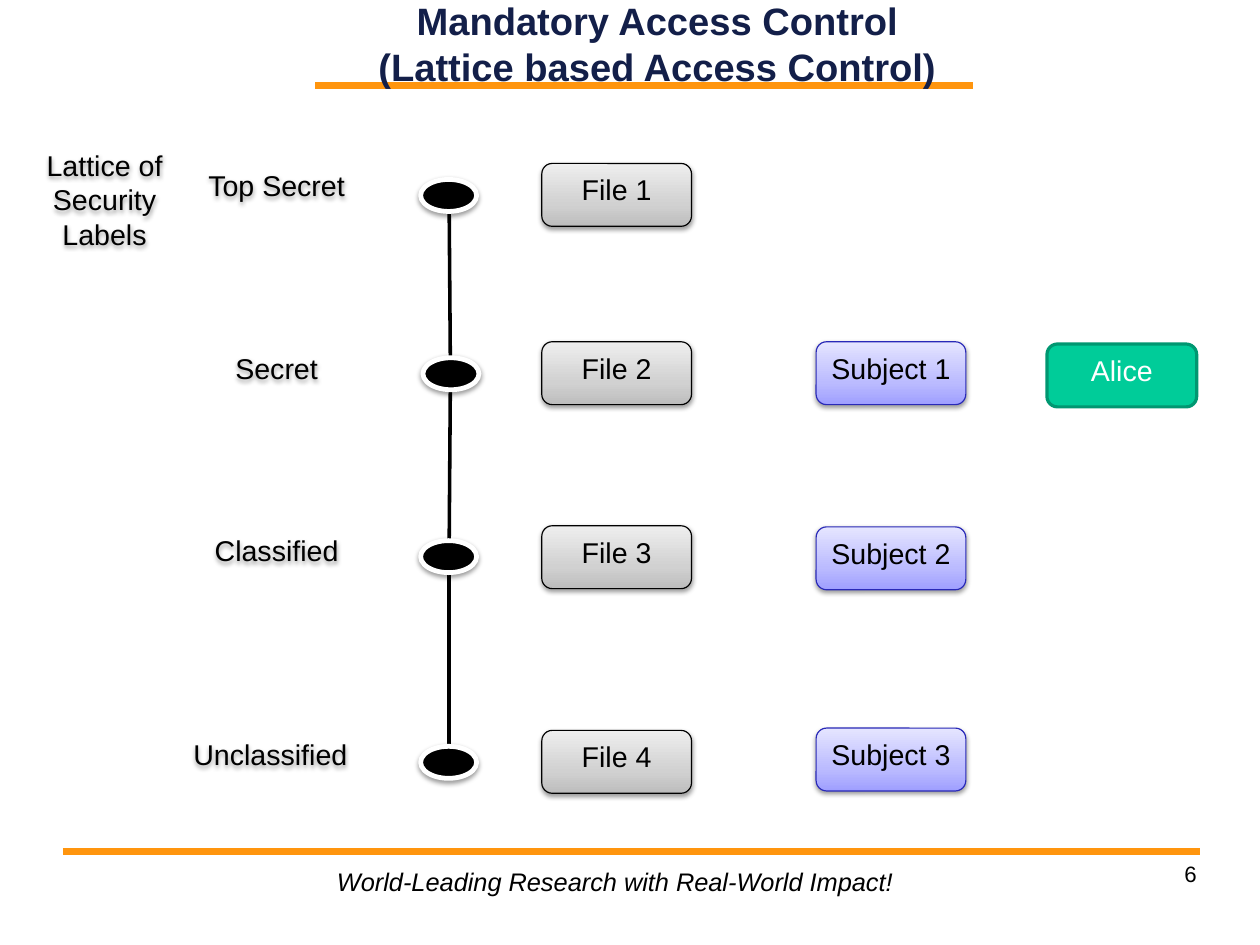
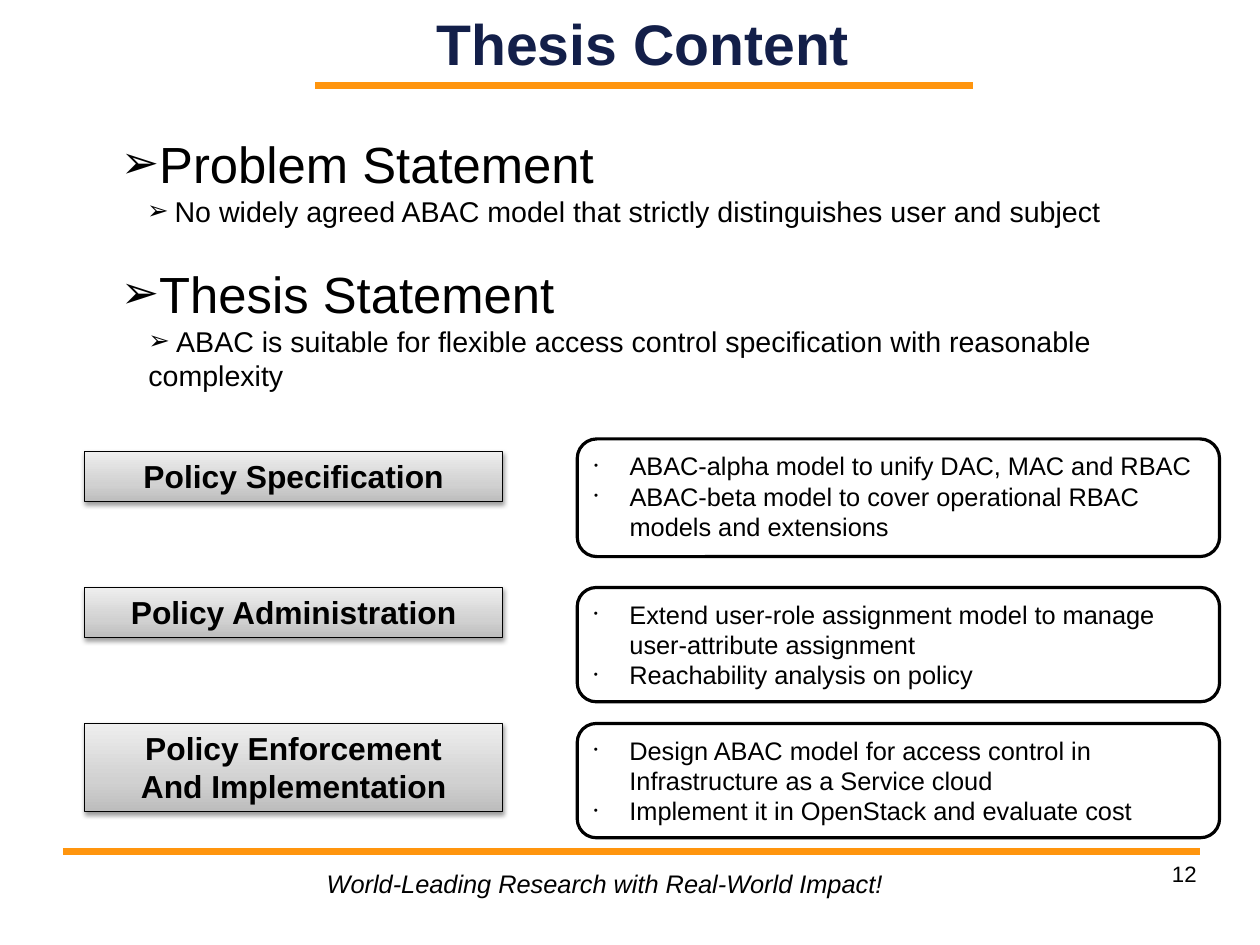
"""Builds two slides on lattice access control and thesis content."""
import copy

import lxml.etree
import pptx
import pptx.dml.color
import pptx.enum.shapes
import pptx.enum.text
import pptx.oxml
import pptx.oxml.ns
import pptx.util

PX = 9144
FONT = "Arial"
BLACK, WHITE, NAVY, ORANGE = "000000", "FFFFFF", "131F49", "FF950E"
GREY = ("BDBDBD", "D1D1D1", "EEEEEE")
LILAC = ("9F9FFF", "BBBBFF", "E5E5FF")
SHADOW = (
    f'<a:outerShdw {pptx.oxml.ns.nsdecls("a")} blurRad="39370" dist="20320" dir="5400000" rotWithShape="0">'
    '<a:srgbClr val="000000"><a:alpha val="38000"/></a:srgbClr></a:outerShdw>'
)
Shape = pptx.enum.shapes.MSO_SHAPE
Align = pptx.enum.text.PP_ALIGN
Anchor = pptx.enum.text.MSO_ANCHOR
color = pptx.dml.color.RGBColor.from_string
qn = pptx.oxml.ns.qn


def place(page, kind, at, fill=None, line=None, width=0.75, shadow=True):
    """Add a shape with a plain, three-stop gradient or empty fill."""
    box = page.shapes.add_shape(kind, *[value * PX for value in at])
    box.shadow.inherit = False
    properties = box._element.spPr
    if shadow:
        properties.find(qn("a:effectLst")).append(pptx.oxml.parse_xml(SHADOW))
    if isinstance(fill, tuple):
        box.fill.gradient()
        box.fill.gradient_angle = 90
        stops = properties.find(".//" + qn("a:gsLst"))
        stops.insert(1, copy.deepcopy(stops[0]))
        for stop, position, tone in zip(box.fill.gradient_stops, (0, 0.35, 1), fill):
            stop.position = position
            stop.color.rgb = color(tone)
    elif fill:
        box.fill.solid()
        box.fill.fore_color.rgb = color(fill)
    else:
        box.fill.background()
    if line:
        box.line.color.rgb = color(line)
        box.line.width = pptx.util.Pt(width)
    else:
        box.line.fill.background()
    return box


def write(box, lines, size, tone=BLACK, align=Align.CENTER, anchor=Anchor.TOP,
          inset=None, bold=False, italic=False, bullet=None):
    """Fill a box with paragraphs; bullet is (symbol, percent, margin, indent)."""
    frame = box.text_frame
    frame.word_wrap = True
    frame.vertical_anchor = anchor
    if inset is not None:
        frame.margin_left = frame.margin_right = inset
        frame.margin_top = frame.margin_bottom = inset
    for text in lines:
        para = frame.add_paragraph() if frame.text else frame.paragraphs[0]
        para.text = text
        para.alignment = align
        if bullet:
            symbol, percent, margin, indent = bullet
            settings = para._p.get_or_add_pPr()
            settings.set("marL", str(margin * PX))
            settings.set("indent", str(indent * PX))
            lxml.etree.SubElement(settings, qn("a:buSzPct")).set("val", str(percent * 1000))
            lxml.etree.SubElement(settings, qn("a:buFont")).set("typeface", FONT)
            lxml.etree.SubElement(settings, qn("a:buChar")).set("char", symbol)
        para.font.name = FONT
        para.font.size = pptx.util.Pt(size)
        para.font.bold = bold
        para.font.italic = italic
        para.font.color.rgb = color(tone)
    return frame


deck = pptx.Presentation()
deck.slide_width = pptx.util.Cm(28)
deck.slide_height = pptx.util.Cm(21)

RULES = [(276, 75, 851, 75, ORANGE, 4.31), (55, 745, 1050, 745, ORANGE, 4.31)]
EDGES = [
    (393, 185, 394, 313, BLACK, 2.25),
    (394, 340, 393, 473, BLACK, 2.25),
    (393, 501, 393, 653, BLACK, 2.25),
]
SLIDES = [
    (["Mandatory Access Control", "(Lattice based Access Control)"], 24, (297, 0, 556, 75),
     (285, 753, 540, 37), "6", EDGES),
    (["Thesis Content"], 36, (241, 0, 643, 75), (276, 755, 540, 37), "12", []),
]
pages = []
for title, title_size, title_at, motto_at, number, edges in SLIDES:
    page = deck.slides.add_slide(deck.slide_layouts[6])
    pages.append(page)
    for left, top, right, bottom, tone, width in RULES + edges:
        rule = page.shapes.add_connector(
            pptx.enum.shapes.MSO_CONNECTOR.STRAIGHT, left * PX, top * PX, right * PX, bottom * PX)
        rule.line.color.rgb = color(tone)
        rule.line.width = pptx.util.Pt(width)
        lxml.etree.SubElement(rule._element.spPr, qn("a:effectLst"))
    title_box, number_box, motto_box = [
        page.shapes.add_textbox(*[value * PX for value in at])
        for at in (title_at, (790, 753, 257, 57), motto_at)
    ]
    write(title_box, title, title_size, NAVY, anchor=Anchor.MIDDLE, inset=0, bold=True)
    write(number_box, [number], 14, align=Align.RIGHT, inset=0)
    write(motto_box, ["World-Leading Research with Real-World Impact!"], 16,
          align=Align.LEFT, italic=True)
lattice_page, thesis_page = pages

heading = place(lattice_page, Shape.OVAL, (0, 106, 183, 127))
write(heading, ["Lattice of Security Labels"], 18)

LEVELS = [
    ("Top Secret", (168, 139, 148, 55), (368, 157), 143, None),
    ("Secret", (168, 299, 148, 55), (370, 313), 299, 299),
    ("Classified", (168, 459, 148, 55), (368, 473), 460, 461),
    ("Unclassified", (147, 637, 179, 55), (368, 653), 639, 637),
]
for index, (label, label_at, node_at, file_top, subject_top) in enumerate(LEVELS):
    write(place(lattice_page, Shape.ROUNDED_RECTANGLE, label_at), [label], 18)
    place(lattice_page, Shape.FLOWCHART_CONNECTOR, (*node_at, 49, 28), BLACK, WHITE, 3)
    file_box = place(lattice_page, Shape.ROUNDED_RECTANGLE, (474, file_top, 131, 55), GREY, BLACK)
    write(file_box, [f"File {index + 1}"], 18)
    if subject_top:
        subject_box = place(lattice_page, Shape.ROUNDED_RECTANGLE,
                            (714, subject_top, 131, 55), LILAC, "2929B8")
        write(subject_box, [f"Subject {index}"], 18)

user_box = place(lattice_page, Shape.ROUNDED_RECTANGLE, (916, 301, 131, 55),
                 "00CC99", "009771", 2, shadow=False)
write(user_box, ["Alice"], 18, WHITE)

statements = thesis_page.shapes.add_textbox(96 * PX, 111 * PX, 950 * PX, 269 * PX)
STATEMENTS = [
    ("Problem Statement", 32, 31, -31),
    ("No widely agreed ABAC model that strictly distinguishes user and subject", 18, 47, -24),
    ("Thesis Statement", 32, 31, -31),
    (" ABAC is suitable for flexible access control specification with reasonable complexity",
     18, 24, 0),
]
for text, size, margin, indent in STATEMENTS:
    frame = write(statements, [text], size, align=Align.LEFT, bullet=("➢", 90, margin, indent))
frame.paragraphs[2].space_before = pptx.util.Pt(22)

TOPICS = [
    (["Policy Specification"], 395, 44, 384, 103,
     ["ABAC-alpha model to unify DAC, MAC and RBAC",
      "ABAC-beta model to cover operational RBAC models and extensions"]),
    (["Policy Administration"], 514, 44, 514, 100,
     ["Extend user-role assignment model to manage user-attribute assignment",
      "Reachability analysis on policy"]),
    (["Policy Enforcement", "And Implementation"], 633, 77, 633, 100,
     ["Design ABAC model for access control in Infrastructure as a Service cloud",
      "Implement it in OpenStack and evaluate cost"]),
]
for topic, topic_top, topic_height, detail_top, detail_height, details in TOPICS:
    topic_box = place(thesis_page, Shape.RECTANGLE, (74, topic_top, 366, topic_height), GREY, BLACK)
    write(topic_box, topic, 20, bold=True)
    detail_box = place(thesis_page, Shape.ROUNDED_RECTANGLE,
                       (505, detail_top, 562, detail_height), WHITE, BLACK, 2, shadow=False)
    write(detail_box, details, 16, align=Align.LEFT, bullet=("•", 45, 31, -31))

deck.save("out.pptx")
